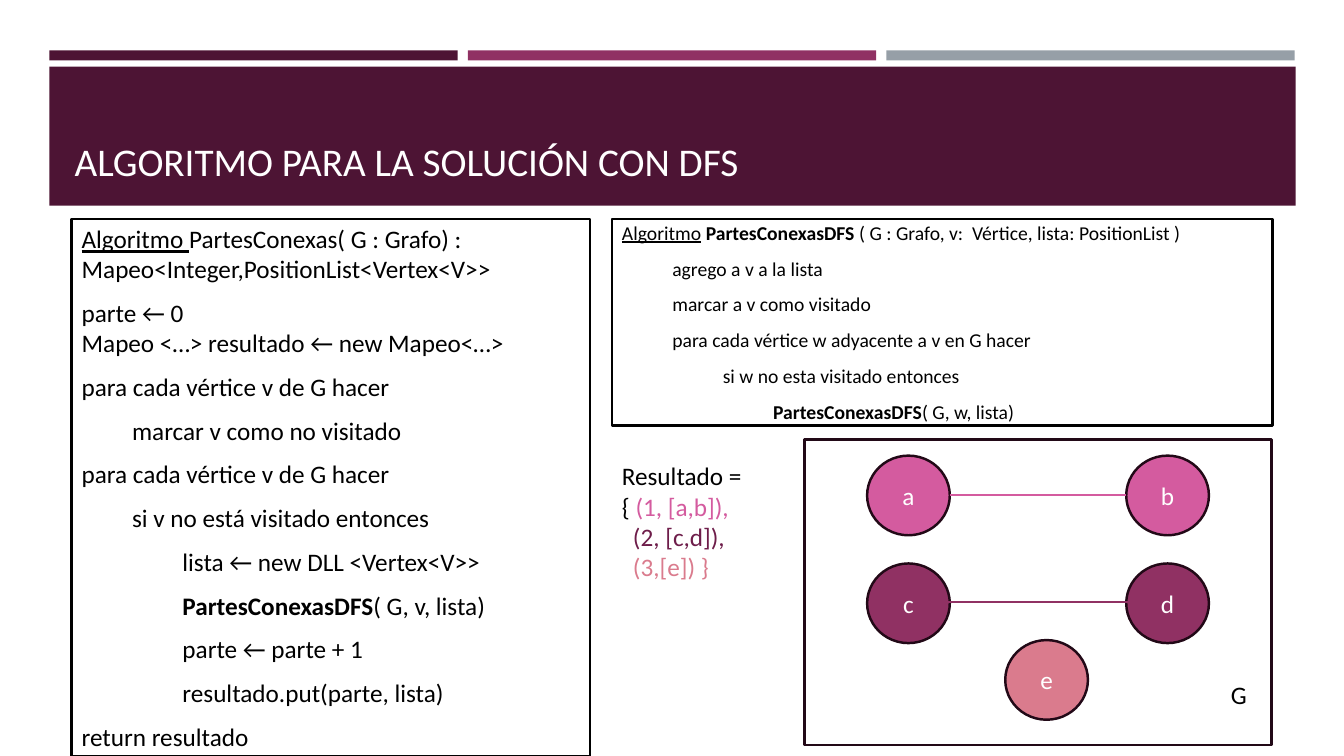
from dataclasses import dataclass

from lxml import etree
from pptx import Presentation
from pptx.dml.color import RGBColor
from pptx.enum.shapes import MSO_CONNECTOR, MSO_SHAPE
from pptx.enum.text import MSO_ANCHOR, MSO_AUTO_SIZE, PP_ALIGN
from pptx.oxml.ns import qn
from pptx.util import Emu, Pt

RECTANGLE, ELLIPSE = MSO_SHAPE.RECTANGLE, MSO_SHAPE.OVAL
STRAIGHT = MSO_CONNECTOR.STRAIGHT
TOP, MIDDLE, BOTTOM = MSO_ANCHOR.TOP, MSO_ANCHOR.MIDDLE, MSO_ANCHOR.BOTTOM
LEFT, CENTER = PP_ALIGN.LEFT, PP_ALIGN.CENTER
NO_FIT = MSO_AUTO_SIZE.NONE
PX = 9144  # one px is a hundredth of an inch


@dataclass(frozen=True)
class Theme:
    font: str = "Calibri"
    title_size: int = 28
    text_size: int = 18
    small_size: int = 14
    line_width: float = 1.75
    white: str = "FFFFFF"
    black: str = "000000"
    plum: str = "4D1434"
    berry: str = "903163"
    grey: str = "969FA7"
    pink: str = "D45B9F"
    wine: str = "6E1D4A"
    rose: str = "DA7B8D"
    outline: str = "220917"


class SlideBuilder:
    """Holds the theme and the current slide; all lengths are in px."""

    def __init__(self, page, theme):
        self.page, self.theme = page, theme

    def paint(self, shape, fill=None, line=None):
        if fill:
            shape.fill.solid()
            shape.fill.fore_color.rgb = RGBColor.from_string(fill)
        else:
            shape.fill.background()
        if line:
            shape.line.color.rgb = RGBColor.from_string(line)
            shape.line.width = Pt(self.theme.line_width)
        else:
            shape.line.fill.background()

    def shape(self, kind, bounds, fill=None, line=None):
        shape = self.page.shapes.add_shape(kind, *(Emu(n * PX) for n in bounds))
        shape.shadow.inherit = False
        self.paint(shape, fill, line)
        return shape

    def placeholder(self, index, bounds):
        """Move a template placeholder and bring it to the front."""
        holder = self.page.placeholders[index]
        holder.left, holder.top, holder.width, holder.height = (Emu(n * PX) for n in bounds)
        self.page.shapes._spTree.append(holder._element)
        return holder

    def text_box(self, bounds):
        return self.page.shapes.add_textbox(*(Emu(n * PX) for n in bounds))

    def edge(self, left, right, y, color):
        line = self.page.shapes.add_connector(STRAIGHT, *(Emu(n * PX) for n in (left, y, right, y)))
        line.line.color.rgb = RGBColor.from_string(color)
        line.line.width = Pt(self.theme.line_width)
        etree.SubElement(line._element.spPr, qn("a:effectLst"))

    def fill_text(self, shape, paragraphs, size, color, anchor=TOP, align=LEFT, spaced=False):
        """Each paragraph is (indent, span, ...); a span is text or (text, style)."""
        frame = shape.text_frame
        frame.word_wrap, frame.auto_size, frame.vertical_anchor = True, NO_FIT, anchor
        for number, (indent, *spans) in enumerate(paragraphs):
            para = frame.paragraphs[0] if number == 0 else frame.add_paragraph()
            para.alignment, para.line_spacing = align, 1.0
            para.space_before = Pt(size * 0.2 if spaced else 0)
            para.space_after = Pt(6 if spaced else 0)
            properties = para._p.get_or_add_pPr()
            properties.set("marL", str(indent * PX))
            properties.set("indent", "0")
            etree.SubElement(properties, qn("a:buNone"))
            for item in spans:
                text, style = (item, {}) if isinstance(item, str) else item
                for row, piece in enumerate(text.split("\n")):
                    if row:
                        para.add_line_break()
                    span = para.add_run()
                    span.text = piece
                    font = span.font
                    font.name, font.size = self.theme.font, Pt(size)
                    font.bold = style.get("bold", False)
                    font.underline = style.get("underline", False)
                    font.color.rgb = RGBColor.from_string(style.get("color", color))
            # A line break keeps the height of its text
            for line_break in para._p.findall(qn("a:br")):
                etree.SubElement(line_break, qn("a:rPr")).set("sz", str(size * 100))


BOLD, UNDERLINE = {"bold": True}, {"underline": True}
TAB = 50

MAIN_ALGORITHM = [
    (0, ("Algoritmo ", UNDERLINE), "PartesConexas( G : Grafo) : Mapeo<Integer,PositionList<Vertex<V>>"),
    (0, "parte ← 0\nMapeo <…> resultado ← new Mapeo<…>"),
    (0, "para cada vértice v de G hacer"),
    (TAB, "marcar v como no visitado"),
    (0, "para cada vértice v de G hacer"),
    (TAB, "si v no está visitado entonces"),
    (2 * TAB, "lista ← new DLL <Vertex<V>>"),
    (2 * TAB, ("PartesConexasDFS", BOLD), "( G, v, lista)"),
    (2 * TAB, "parte ← parte + 1"),
    (2 * TAB, "resultado.put(parte, lista)"),
    (0, "return resultado"),
]

DFS_ALGORITHM = [
    (0, ("Algoritmo", UNDERLINE), " ", ("PartesConexasDFS", BOLD),
     " ( G : Grafo, v:  Vértice, lista: PositionList )"),
    (TAB, "agrego a v a la lista"),
    (TAB, "marcar a v como visitado"),
    (TAB, "para cada vértice w adyacente a v en G hacer"),
    (2 * TAB, "si w no esta visitado entonces"),
    (3 * TAB, ("PartesConexasDFS", BOLD), "( G, w, lista)"),
]


def main():
    theme = Theme()
    deck = Presentation()
    deck.slide_width, deck.slide_height = Emu(1333 * PX), Emu(750 * PX)
    page = deck.slides.add_slide(deck.slide_layouts[1])
    builder = SlideBuilder(page, theme)

    # Header bands
    for column, color in enumerate((theme.plum, theme.berry, theme.grey)):
        builder.shape(RECTANGLE, (49 + 415 * column, 50, 405, 10), color)
    builder.shape(RECTANGLE, (49, 66, 1236, 138), theme.plum)

    # Title
    title = builder.placeholder(0, (64, 80, 1206, 108))
    builder.fill_text(title, [(0, "ALGORITMO PARA LA SOLUCIÓN CON DFS")],
                      theme.title_size, theme.white, BOTTOM)

    # Algorithms
    body = builder.placeholder(1, (71, 217, 514, 533))
    builder.paint(body, theme.white, theme.black)
    builder.fill_text(body, MAIN_ALGORITHM, theme.text_size, theme.black, MIDDLE, spaced=True)
    panel = builder.shape(RECTANGLE, (607, 217, 655, 205), theme.white, theme.black)
    builder.fill_text(panel, DFS_ALGORITHM, theme.small_size, theme.black, MIDDLE, spaced=True)

    # Graph
    builder.shape(RECTANGLE, (798, 436, 463, 303), line=theme.outline)
    graph_label = builder.text_box((1211, 669, 45, 40))
    builder.fill_text(graph_label, [(0, "G")], theme.text_size, theme.black)
    vertices = [
        ("a", 860, 452, theme.pink),
        ("b", 1117, 452, theme.pink),
        ("c", 860, 559, theme.berry),
        ("d", 1117, 559, theme.berry),
        ("e", 997, 635, theme.rose),
    ]
    for name, left, top, color in vertices:
        vertex = builder.shape(ELLIPSE, (left, top, 82, 79), color, theme.outline)
        builder.fill_text(vertex, [(0, name)], theme.text_size, theme.white, MIDDLE, CENTER)
    builder.edge(942, 1117, 491, theme.pink)
    builder.edge(934, 1125, 597, theme.berry)

    # Result
    result = builder.text_box((607, 452, 170, 131))
    builder.fill_text(result, [
        (0, "Resultado ="),
        (0, "{ ", ("(1, [a,b]),", {"color": theme.pink})),
        (11, ("(2, [c,d]),", {"color": theme.wine})),
        (11, ("(3,[e]) }", {"color": theme.rose})),
    ], theme.text_size, theme.black)

    deck.save("out.pptx")


if __name__ == "__main__":
    main()
